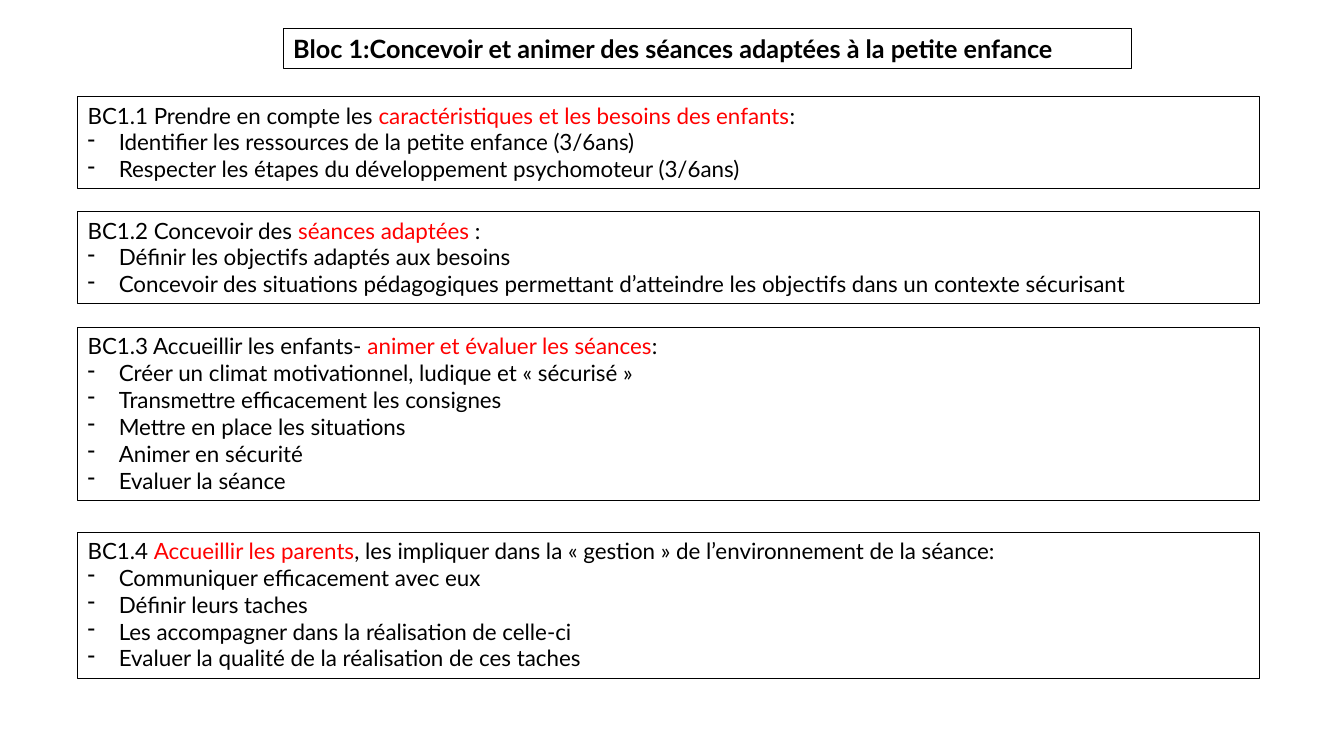
from lxml.etree import SubElement as Sub
from pptx import Presentation
from pptx.dml.color import RGBColor as Rgb
from pptx.enum.text import MSO_ANCHOR as Anchor, MSO_AUTO_SIZE as Fit
from pptx.oxml.ns import qn
from pptx.util import Inches, Pt

COLORS = {"ink": "000000", "key": "FF0000"}
FONT = "Lato"
WIDE, HIGH = Inches(13.33), Inches(7.5)
COL, ROW = WIDE / 100, HIGH / 100
LEFT, SPAN = 5.78, 87.92  # columns
LINE, PAD = 3.6, 1.33  # rows: one line of text, both insets
INDENT = Inches(0.31)

TITLE = "Bloc 1:Concevoir et animer des séances adaptées à la petite enfance"
# Top row, heading (start, key words, end), tasks
BLOCKS = [
    (12.8, ("BC1.1 Prendre en compte les ",
            "caractéristiques et les besoins des enfants", ":"),
     ["Identifier les ressources de la petite enfance (3/6ans)",
      "Respecter les étapes du développement psychomoteur (3/6ans)"]),
    (28, ("BC1.2 Concevoir des ", "séances adaptées ", ":"),
     ["Définir les objectifs adaptés aux besoins",
      "Concevoir des situations pédagogiques permettant d’atteindre "
      "les objectifs dans un contexte sécurisant"]),
    (43.33, ("BC1.3 Accueillir les enfants- ",
             "animer et évaluer les séances", ":"),
     ["Créer un climat motivationnel, ludique et « sécurisé »",
      "Transmettre efficacement les consignes",
      "Mettre en place les situations",
      "Animer en sécurité",
      "Evaluer la séance"]),
    (70.4, ("BC1.4 ", "Accueillir les parents",
            ", les impliquer dans la « gestion » de l’environnement "
            "de la séance:"),
     ["Communiquer efficacement avec eux",
      "Définir leurs taches",
      "Les accompagner dans la réalisation de celle-ci",
      "Evaluer la qualité de la réalisation de ces taches"]),
]


def add_frame(slide, col, row, cols, rows):
    """Outlined text box placed in grid units; returns its text frame."""
    box = slide.shapes.add_textbox(int(col * COL), int(row * ROW),
                                   int(cols * COL), int(rows * ROW))
    box.line.color.rgb = Rgb.from_string(COLORS["ink"])
    box.line.width = Pt(0.75)
    frame = box.text_frame
    frame.word_wrap = True
    frame.auto_size = Fit.SHAPE_TO_FIT_TEXT
    frame.vertical_anchor = Anchor.TOP
    return frame


def add_run(para, text, color="ink", size=16, bold=False):
    run = para.add_run()
    run.text = text
    font = run.font
    font.name, font.size, font.bold = FONT, Pt(size), bold
    font.color.rgb = Rgb.from_string(COLORS[color])


def add_dash(para):
    props = para._p.get_or_add_pPr()
    props.set("marL", str(INDENT))
    props.set("indent", str(-INDENT))
    Sub(props, qn("a:buFontTx"))
    Sub(props, qn("a:buChar")).set("char", "-")


def add_title(slide):
    frame = add_frame(slide, 21.08, 3.73, 63.09, 5.33)
    add_run(frame.paragraphs[0], TITLE, size=18, bold=True)


def add_block(slide, row, head, tasks):
    rows = PAD + LINE * (1 + len(tasks))
    frame = add_frame(slide, LEFT, row, SPAN, rows)
    for text, color in zip(head, ("ink", "key", "ink")):
        add_run(frame.paragraphs[0], text, color)
    for task in tasks:
        para = frame.add_paragraph()
        add_dash(para)
        add_run(para, task)


def main():
    deck = Presentation()
    deck.slide_width, deck.slide_height = WIDE, HIGH
    slide = deck.slides.add_slide(deck.slide_layouts[6])
    for block in BLOCKS:
        add_block(slide, *block)
    add_title(slide)
    deck.save("out.pptx")


if __name__ == "__main__":
    main()
